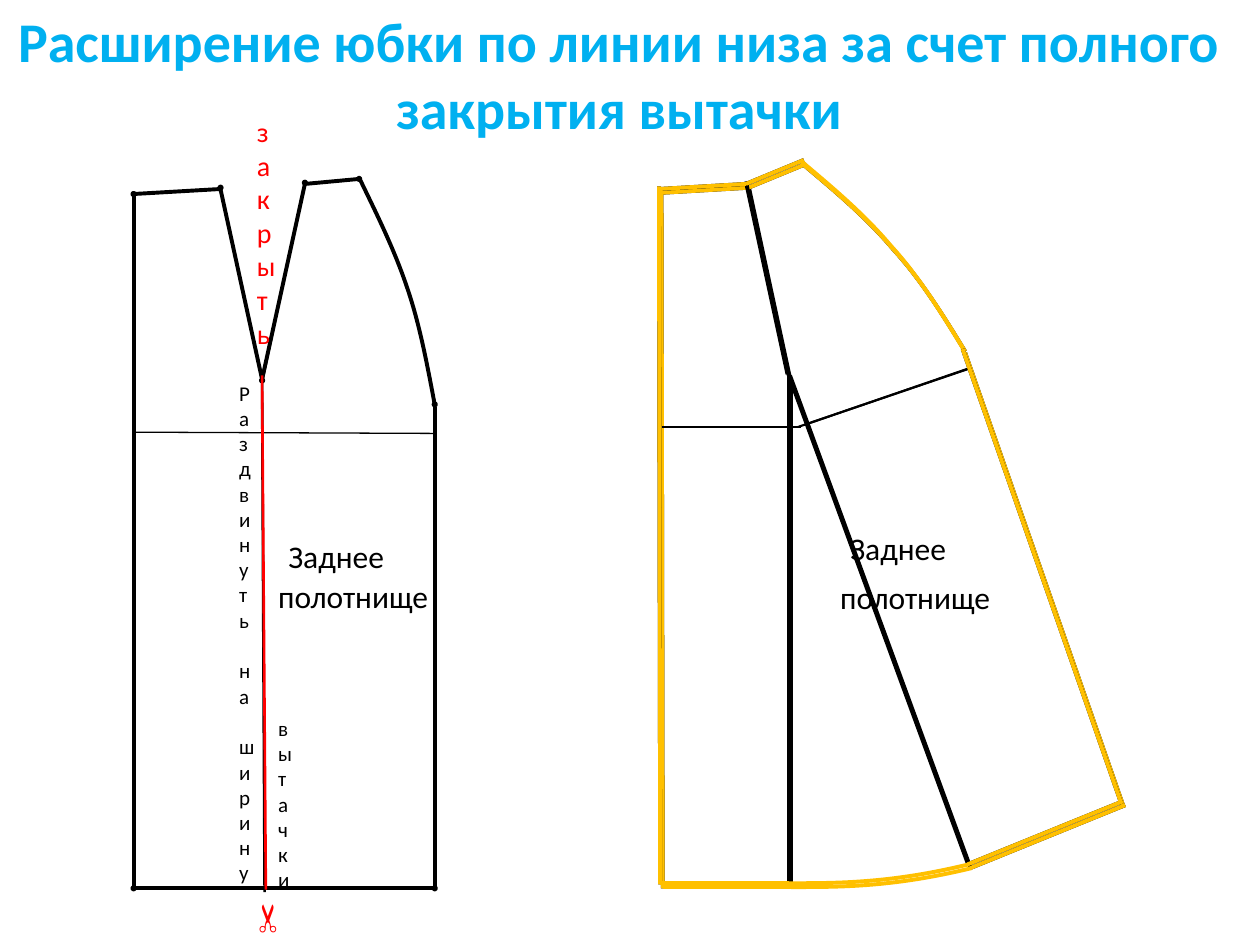
import math

from lxml import etree
from pptx import Presentation
from pptx import util as u
from pptx.dml.color import RGBColor
from pptx.enum import shapes, text
from pptx.oxml.ns import qn

COLORS = {"ink": "000000", "cut": "FF0000", "outline": "FFC000",
          "title": "00B0F0", "dot": "4F81BD"}
THIN, MEDIUM, THICK = 0.75, 1.5, 2.25
HIP_TURN = 340.2

deck = Presentation()
deck.slide_width, deck.slide_height = u.Inches(10), u.Inches(7.5)
CELL = deck.slide_width // 10  # the slide is a grid of 10 columns by 7.5 rows
page = deck.slides.add_slide(deck.slide_layouts[5])


def write(paragraphs, area, box=None, size=18, color="ink", bold=False,
          wrap=True, align=text.PP_ALIGN.LEFT, gap=0, rotation=0):
    """Put paragraphs into a new text box, or into the given placeholder."""
    area = [round(value * CELL) for value in area]
    box = box or page.shapes.add_textbox(*area)
    box.left, box.top, box.width, box.height = area
    box.rotation = rotation
    frame = box.text_frame
    frame.word_wrap = wrap
    frame.auto_size = text.MSO_AUTO_SIZE.SHAPE_TO_FIT_TEXT
    frame.vertical_anchor = text.MSO_ANCHOR.TOP
    for index, words in enumerate(paragraphs):
        para = frame.add_paragraph() if index else frame.paragraphs[0]
        para.alignment = align
        para.space_before = u.Pt(gap if index else 0)
        span = para.add_run()
        span.text = words
        span.font.name, span.font.size, span.font.bold = "Calibri", u.Pt(size), bold
        span.font.color.rgb = RGBColor.from_string(COLORS[color])


def draw(points, width=THICK, color="ink", shift=(0, 0), curved=False, rotation=0):
    """Draw a line, a polyline, or a chain of cubic curves, in a turned box if asked."""
    middle = [(first + last) / 2 for first, last in zip(points[0], points[-1])]
    cos, sin = math.cos(math.radians(-rotation)), math.sin(math.radians(-rotation))
    spots = []
    for x, y in points:
        dx, dy = x - middle[0], y - middle[1]
        spots.append((round((middle[0] + dx * cos - dy * sin + shift[0]) * CELL),
                      round((middle[1] + dx * sin + dy * cos + shift[1]) * CELL)))
    if len(spots) == 2:
        line = page.shapes.add_connector(shapes.MSO_CONNECTOR.STRAIGHT, *spots[0], *spots[1])
        etree.SubElement(line._element.spPr, qn("a:effectLst"))
    else:
        builder = page.shapes.build_freeform(*spots[0])
        builder.add_line_segments(spots[1:], close=False)
        line = builder.convert_to_shape()
        line.rotation = rotation
        line.fill.background()
        line.shadow.inherit = False
    if curved:
        segments = list(line._element.iter(qn("a:lnTo")))
        for start in range(0, len(segments), 3):
            curve = etree.Element(qn("a:cubicBezTo"))
            segments[start].addprevious(curve)
            for segment in segments[start:start + 3]:
                curve.append(segment[0])
                segment.getparent().remove(segment)
    line.line.width = u.Pt(width)
    line.line.color.rgb = RGBColor.from_string(COLORS[color])


# Title
write(["Расширение юбки по линии низа за счет полного", "закрытия вытачки"],
      (0, 0, 9.83, 1.18), box=page.shapes.title, size=32, color="title",
      bold=True, wrap=False, align=text.PP_ALIGN.CENTER)

# Left skirt: corner dots
DOT = 0.02
for x, y in [(1.05, 1.53), (1.05, 7.04), (3.44, 7.04), (3.44, 3.2),
             (2.84, 1.41), (2.41, 1.44), (2.07, 3.01), (1.74, 1.48)]:
    dot = page.shapes.add_shape(shapes.MSO_SHAPE.OVAL,
                                *[round(value * CELL) for value in (x, y, DOT, DOT)])
    dot.shadow.inherit = False
    dot.fill.solid()
    dot.fill.fore_color.rgb = RGBColor.from_string(COLORS["dot"])
    dot.line.color.rgb = RGBColor.from_string(COLORS["ink"])
    dot.line.width = u.Pt(2)

# Left skirt: hip line, dart and outline
for points in [[(1.06, 3.43), (3.44, 3.44)], [(1.06, 3.43), (2.09, 3.43)],
               [(1.75, 1.51), (2.08, 3.01)], [(2.42, 1.45), (2.09, 3.01)]]:
    draw(points, THIN)
side = [(2.86, 1.43), (2.99, 1.7), (3.13, 1.98), (3.23, 2.28),
        (3.33, 2.57), (3.39, 2.89), (3.45, 3.21)]
for width in (THIN, THICK):
    draw(side, width, curved=True)
for points in [[(1.06, 1.54), (1.75, 1.5), (2.08, 3.01), (2.42, 1.46), (2.85, 1.42)],
               [(3.45, 7.05), (1.07, 7.05)], [(1.06, 7.05), (1.06, 1.54)],
               [(3.45, 3.23), (3.45, 7.05)]]:
    draw(points)

# Left skirt: labels and cutting line
write(["Заднее"], (2.19, 4.21, 1.17, 0.4))
write(["полотнище"], (2.11, 4.53, 1.56, 0.4))
write("закрыть", (1.94, 0.86, 0.32, 2.29), size=16, color="cut")
draw([(2.08, 3.01), (2.1, 7.08)], MEDIUM)
write(["Раздвинуть", "на", "ширину"], (1.8, 2.97, 0.23, 4.54), size=12, gap=14.6)
write(["вытачки"], (2.11, 5.63, 0.31, 1.51), size=12)
write(["✂"], (1.87, 7.07, 0.49, 0.4), color="cut", bold=True, wrap=False, rotation=270)
draw([(2.08, 2.98), (2.11, 7.06)], MEDIUM, "cut")

# Right skirt: the pattern is laid down twice with a small shift
hip_curve = [(6.38, 1.31), (6.63, 1.52), (6.88, 1.73), (7.09, 1.98),
             (7.31, 2.22), (7.49, 2.51), (7.66, 2.79)]
hem_curve = [(6.28, 7.04), (6.68, 7.04), (7.09, 7.04), (7.71, 6.89)]
edges = [[(8.93, 6.39), (7.7, 6.89)], [(7.66, 2.8), (8.92, 6.41)],
         [(5.94, 1.49), (6.4, 1.3)], [(6.28, 7.04), (5.26, 7.04)],
         [(5.26, 7.05), (5.25, 1.51)], [(5.25, 1.53), (5.94, 1.49)]]
seams = [[(6.27, 2.98), (7.7, 6.88)], [(5.94, 1.47), (6.27, 3)], [(6.28, 3.01), (6.28, 7.05)]]
hip_lines = [[(6.43, 3.36), (7.71, 2.92)], [(6.34, 3.39), (7.69, 2.93)],
             [(5.28, 3.39), (6.3, 3.39)], [(5.27, 3.39), (6.36, 3.39)]]
draw(hip_curve, curved=True, rotation=HIP_TURN)
for shift in [(0, 0), (-0.02, -0.03)]:
    for points in edges + seams:
        draw(points, shift=shift)
    draw(hem_curve, THIN, shift=shift, curved=True)
    for points in hip_lines:
        draw(points, THIN, shift=(shift[0], 0))
    for points in edges:
        draw(points, color="outline", shift=shift)
    draw(hip_curve, color="outline", shift=shift, curved=True, rotation=HIP_TURN)
    draw(hem_curve, color="outline", shift=shift, curved=True)

# Right skirt: label
write(["Заднее"], (6.65, 4.15, 1.02, 0.4))
write(["полотнище"], (6.57, 4.54, 1.4, 0.4), wrap=False)

deck.save("out.pptx")
